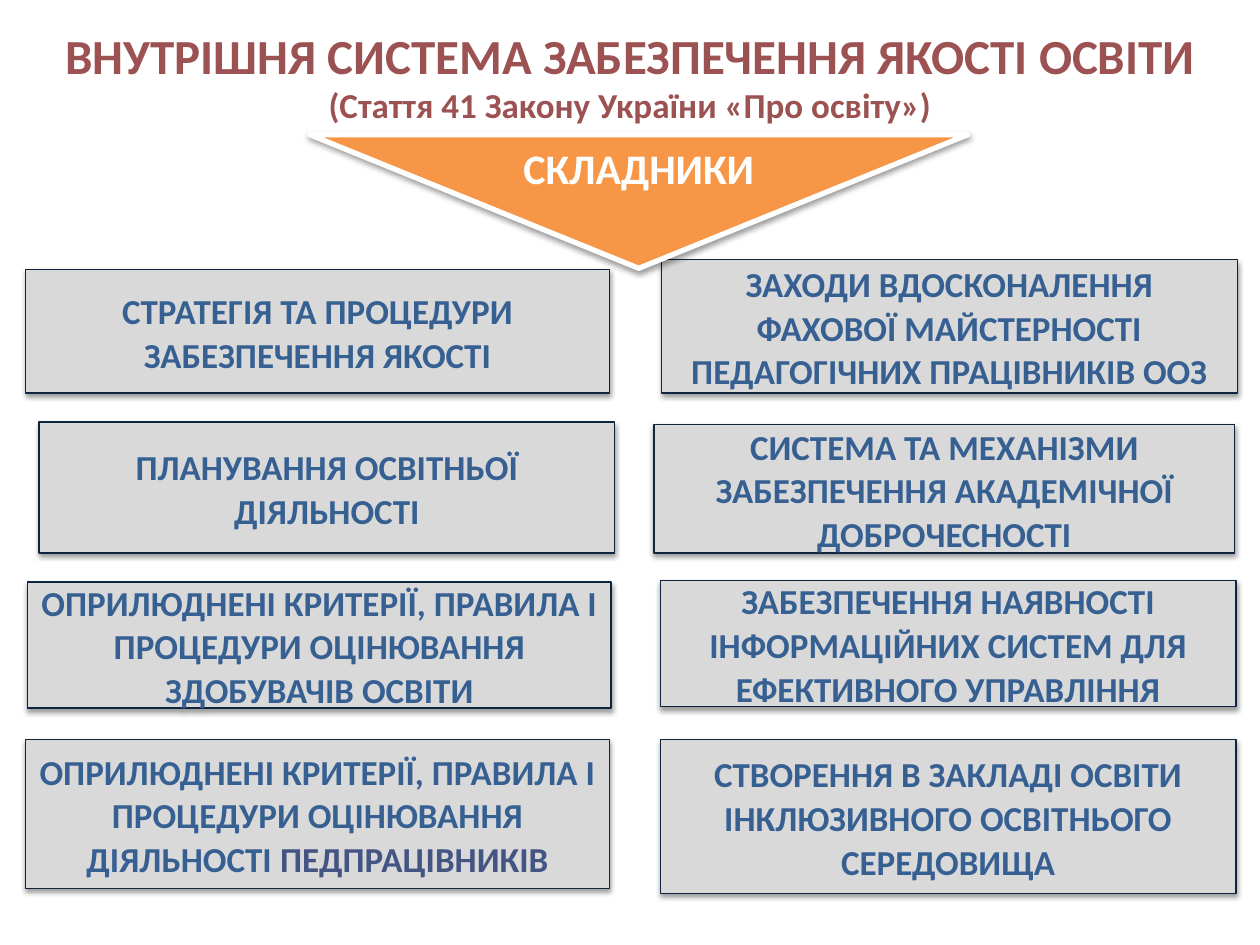
from lxml import etree
from pptx import Presentation
from pptx.dml.color import RGBColor
from pptx.enum.shapes import MSO_SHAPE
from pptx.enum.text import MSO_ANCHOR, PP_ALIGN
from pptx.oxml.ns import qn
from pptx.util import Inches, Pt

RECT = MSO_SHAPE.RECTANGLE
MERGE = MSO_SHAPE.FLOWCHART_MERGE
MIDDLE = MSO_ANCHOR.MIDDLE
CENTER = PP_ALIGN.CENTER

FONT = "Calibri"
COLORS = {
    "title": "9C5252", "arrow": "F79646", "white": "FFFFFF", "box": "D9D9D9",
    "edge": "0F243E", "text": "376092", "accent": "445583", "shadow": "000000",
}

# Content: paragraphs and their sizes
TITLE = [
    ("ВНУТРІШНЯ СИСТЕМА ЗАБЕЗПЕЧЕННЯ ЯКОСТІ ОСВІТИ", 28),
    ("(Стаття 41 Закону України «Про освіту»)", 20),
]
HEADING = "СКЛАДНИКИ"

# Boxes: left, top, width, height, text, accented ending
BOXES = [
    (0.2, 2.14, 4.64, 0.98, "СТРАТЕГІЯ ТА ПРОЦЕДУРИ ЗАБЕЗПЕЧЕННЯ ЯКОСТІ", ""),
    (5.25, 2.06, 4.57, 1.06,
     "ЗАХОДИ ВДОСКОНАЛЕННЯ ФАХОВОЇ МАЙСТЕРНОСТІ ПЕДАГОГІЧНИХ ПРАЦІВНИКІВ ООЗ", ""),
    (0.31, 3.35, 4.57, 1.04, "ПЛАНУВАННЯ ОСВІТНЬОЇ ДІЯЛЬНОСТІ", ""),
    (5.19, 3.37, 4.61, 1.02,
     "СИСТЕМА ТА МЕХАНІЗМИ ЗАБЕЗПЕЧЕННЯ АКАДЕМІЧНОЇ ДОБРОЧЕСНОСТІ", ""),
    (0.22, 4.62, 4.63, 1,
     "ОПРИЛЮДНЕНІ КРИТЕРІЇ, ПРАВИЛА І ПРОЦЕДУРИ ОЦІНЮВАННЯ ЗДОБУВАЧІВ ОСВІТИ", ""),
    (5.24, 4.61, 4.57, 1,
     "ЗАБЕЗПЕЧЕННЯ НАЯВНОСТІ ІНФОРМАЦІЙНИХ СИСТЕМ ДЛЯ ЕФЕКТИВНОГО УПРАВЛІННЯ", ""),
    (0.2, 5.87, 4.64, 1.18,
     "ОПРИЛЮДНЕНІ КРИТЕРІЇ, ПРАВИЛА І ПРОЦЕДУРИ ОЦІНЮВАННЯ ДІЯЛЬНОСТІ",
     " ПЕДПРАЦІВНИКІВ"),
    (5.24, 5.87, 4.57, 1.22,
     "СТВОРЕННЯ В ЗАКЛАДІ ОСВІТИ ІНКЛЮЗИВНОГО ОСВІТНЬОГО СЕРЕДОВИЩА", ""),
]


def color(name):
    return RGBColor.from_string(COLORS[name])


def style(run, size, name):
    font = run.font
    font.name, font.size, font.bold = FONT, Pt(size), True
    font.color.rgb = color(name)


def add_shadow(shape):
    shape.shadow.inherit = False
    effects = shape._element.spPr.find(qn("a:effectLst"))
    outer = etree.SubElement(effects, qn("a:outerShdw"), blurRad=str(Pt(3.1)),
                             dist=str(Pt(1.6)), dir="5400000", rotWithShape="0")
    tint = etree.SubElement(outer, qn("a:srgbClr"), val=COLORS["shadow"])
    etree.SubElement(tint, qn("a:alpha"), val="38000")


def add_panel(slide, kind, place, fill, edge, width, text, size, name):
    shape = slide.shapes.add_shape(kind, *map(Inches, place))
    shape.fill.solid()
    shape.fill.fore_color.rgb = color(fill)
    shape.line.color.rgb = color(edge)
    shape.line.width = Pt(width)
    add_shadow(shape)
    frame = shape.text_frame
    frame.word_wrap = True
    frame.vertical_anchor = MIDDLE
    para = frame.paragraphs[0]
    para.text = text
    para.alignment = CENTER
    style(para.runs[0], size, name)
    return para


deck = Presentation()
deck.slide_width, deck.slide_height = Inches(10), Inches(7.5)
slide = deck.slides.add_slide(deck.slide_layouts[6])

# Component boxes
for *place, text, ending in BOXES:
    para = add_panel(slide, RECT, place, "box", "edge", 0.75, text, 20, "text")
    para.line_spacing = Pt(25)
    if ending:
        run = para.add_run()
        run.text = ending
        style(run, 20, "accent")

# Pointer with the heading
add_panel(slide, MERGE, (2.46, 1.07, 5.22, 1.06), "arrow", "white", 3,
          HEADING, 24, "white")

# Title
title = slide.shapes.add_textbox(0, Inches(0.15), Inches(10), Inches(1.85))
frame = title.text_frame
frame.word_wrap = True
frame.text = "\n".join(text for text, size in TITLE)
for para, (text, size) in zip(frame.paragraphs, TITLE):
    para.alignment = CENTER
    style(para.runs[0], size, "title")

deck.save("out.pptx")
